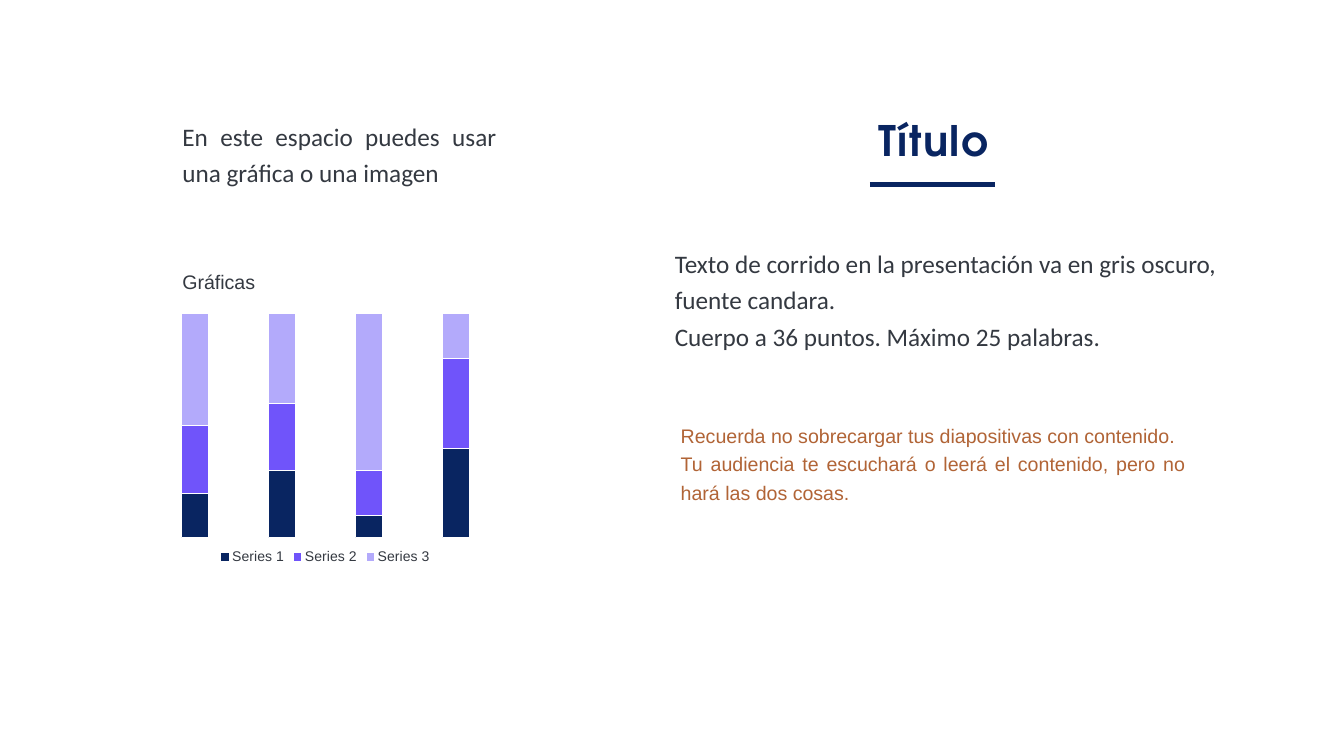
from dataclasses import dataclass

from lxml import etree
from pptx import Presentation
from pptx.chart.data import CategoryChartData as ChartData
from pptx.dml.color import RGBColor as Color
from pptx.enum.chart import XL_CHART_TYPE as ChartType, XL_LEGEND_POSITION as LegendPosition
from pptx.enum.shapes import MSO_CONNECTOR as Connector
from pptx.enum.text import MSO_ANCHOR as Anchor, MSO_AUTO_SIZE as AutoSize, PP_ALIGN as Align
from pptx.oxml.ns import qn
from pptx.util import Cm, Pt


@dataclass(frozen=True)
class Theme:
    navy: str = "092561"
    violet: str = "7054FA"
    lilac: str = "B3AAFB"
    gray: str = "343941"
    rust: str = "B16436"
    white: str = "FFFFFF"
    heading_font: str = "TeX Gyre Adventor"
    body_font: str = "Calibri"
    label_font: str = "Arial"
    title_size: int = 60
    body_size: int = 36
    label_size: int = 28
    legend_size: int = 20


THEME = Theme()


def write_text(frame, lines, *, font=THEME.body_font, size=THEME.body_size, color=THEME.gray,
               bold=False, align=Align.LEFT, spacing=1.2, indent=0, tracking=0):
    """Fill a text frame with one formatted paragraph per line."""
    for index, line in enumerate(lines):
        paragraph = frame.paragraphs[0] if index == 0 else frame.add_paragraph()
        paragraph.alignment = align
        paragraph.line_spacing = spacing
        paragraph.space_before = Pt(0)
        if indent:
            properties = paragraph._p.get_or_add_pPr()
            properties.set("marL", str(Cm(indent)))
            properties.set("indent", "0")
        run = paragraph.add_run()
        run.text = line
        run.font.name = font
        run.font.size = Pt(size)
        run.font.bold = bold
        run.font.color.rgb = Color.from_string(color)
        if tracking:
            run._r.get_or_add_rPr().set("spc", str(tracking * 100))


class SlideBuilder:
    def __init__(self, slide, theme):
        self.slide = slide
        self.theme = theme

    def title(self, text, left, top, width, height):
        shape = self.slide.shapes.title
        shape.left, shape.top, shape.width, shape.height = map(Cm, (left, top, width, height))
        frame = shape.text_frame
        frame.auto_size = AutoSize.NONE
        frame.word_wrap = False
        frame.vertical_anchor = Anchor.MIDDLE
        write_text(frame, [text], font=self.theme.heading_font, size=self.theme.title_size,
                   color=self.theme.navy, bold=True, align=Align.CENTER,
                   spacing=Pt(70.6), tracking=2)

    def text(self, lines, left, top, width, height, **style):
        box = self.slide.shapes.add_textbox(*map(Cm, (left, top, width, height)))
        box.text_frame.word_wrap = True
        write_text(box.text_frame, lines, **style)

    def rule(self, left, right, y, weight):
        line = self.slide.shapes.add_connector(
            Connector.STRAIGHT, Cm(left), Cm(y), Cm(right), Cm(y))
        line.line.color.rgb = Color.from_string(self.theme.navy)
        line.line.width = Pt(weight)
        etree.SubElement(line._element.spPr, qn("a:effectLst"))

    def stacked_chart(self, categories, series, left, top, width, height):
        data = ChartData()
        data.categories = categories
        for name, values, _ in series:
            data.add_series(name, values)
        chart = self.slide.shapes.add_chart(
            ChartType.COLUMN_STACKED_100, *map(Cm, (left, top, width, height)), data).chart
        chart.has_title = False
        chart.font.name = self.theme.label_font
        chart.font.size = Pt(self.theme.legend_size)
        chart.font.color.rgb = Color.from_string(self.theme.gray)

        # Bars only: no axes or gridlines
        for axis in (chart.category_axis, chart.value_axis):
            axis.has_major_gridlines = False
            axis.visible = False
        plot = chart.plots[0]
        plot.gap_width = 219
        plot.overlap = 100
        plot.vary_by_categories = False
        for drawn, (_, _, color) in zip(plot.series, series):
            drawn.format.fill.solid()
            drawn.format.fill.fore_color.rgb = Color.from_string(color)
            drawn.format.line.color.rgb = Color.from_string(self.theme.white)
            drawn.format.line.width = Pt(0.75)

        chart.has_legend = True
        chart.legend.position = LegendPosition.BOTTOM
        chart.legend.include_in_layout = False


def main():
    presentation = Presentation()
    presentation.slide_width, presentation.slide_height = Cm(67.74), Cm(38.1)
    slide = presentation.slides.add_slide(presentation.slide_layouts[5])
    builder = SlideBuilder(slide, THEME)
    chart_left, text_left, header_top = 8.94, 33.76, 5.69

    # Right column: title, body and reminder
    builder.title("Título", 43.97, header_top, 6.15, 2.79)
    builder.rule(43.84, 50.17, 9.3, weight=6)
    builder.text(["Texto de corrido en la presentación va en gris oscuro, fuente candara.",
                  "Cuerpo a 36 puntos. Máximo 25 palabras."],
                 text_left, 12.09, 29.57, 5.36)
    builder.text(["Recuerda no sobrecargar tus diapositivas con contenido.",
                  "Tu audiencia te escuchará o leerá el contenido, pero no hará las dos cosas."],
                 text_left, 21.01, 26.21, 4.57, font=THEME.label_font, size=THEME.label_size,
                 color=THEME.rust, align=Align.JUSTIFY, indent=0.3)

    # Left column: introduction, heading and chart
    builder.text(["En este espacio puedes usar una gráfica o una imagen"],
                 chart_left, header_top, 16.33, 7.04, align=Align.JUSTIFY)
    builder.text(["Gráficas"], chart_left, 13.49, 6.6, 1.27,
                 font=THEME.label_font, size=THEME.label_size, spacing=1.0)
    builder.stacked_chart(["1", "2", "3", "4"],
                          [("Series 1", (20, 30, 10, 40), THEME.navy),
                           ("Series 2", (30, 30, 20, 40), THEME.violet),
                           ("Series 3", (50, 40, 70, 20), THEME.lilac)],
                          7.26, 15.54, 18.26, 13.08)

    presentation.save("out.pptx")


if __name__ == "__main__":
    main()
